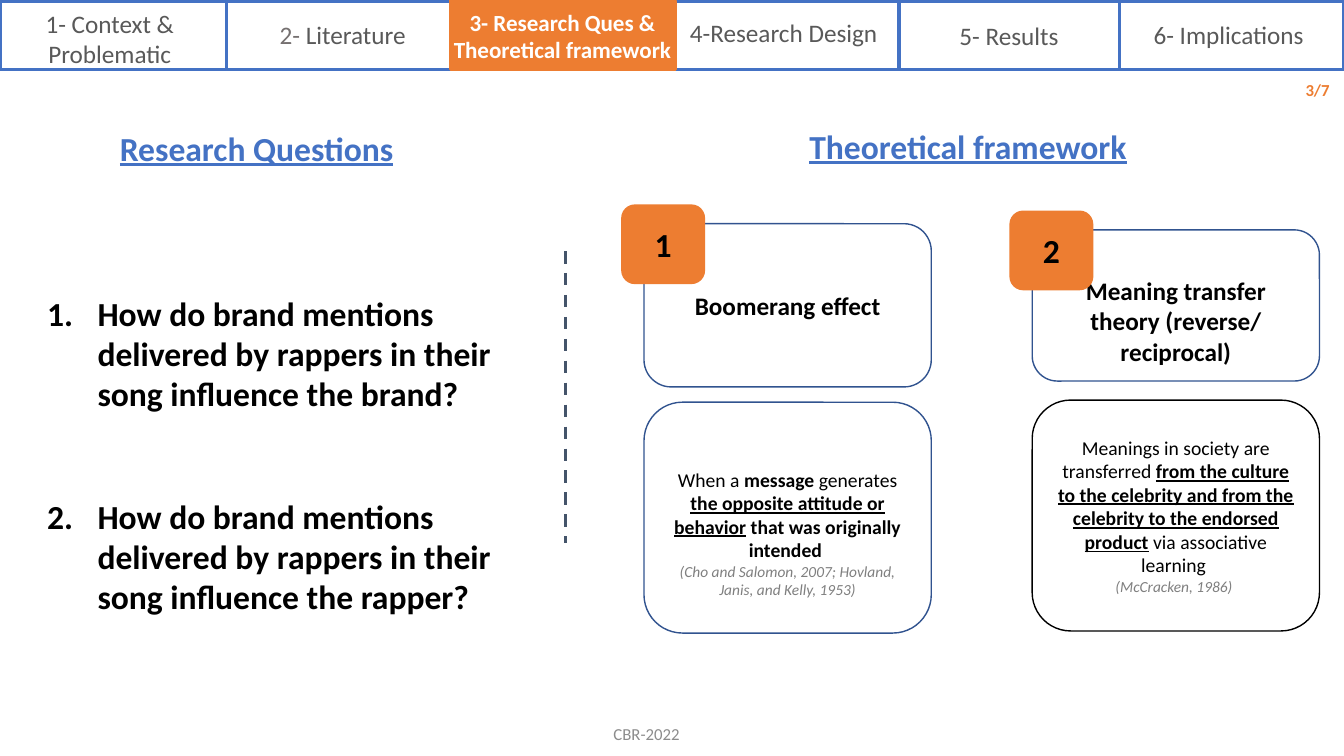
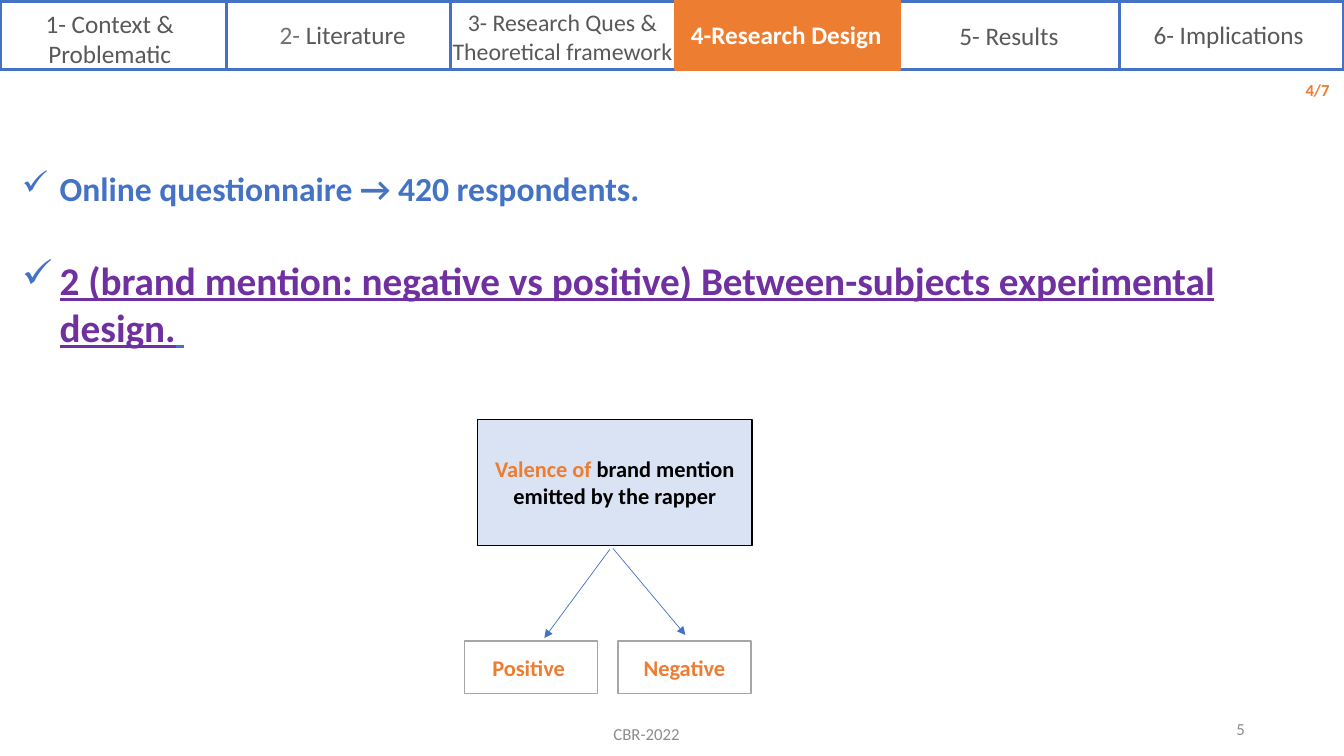
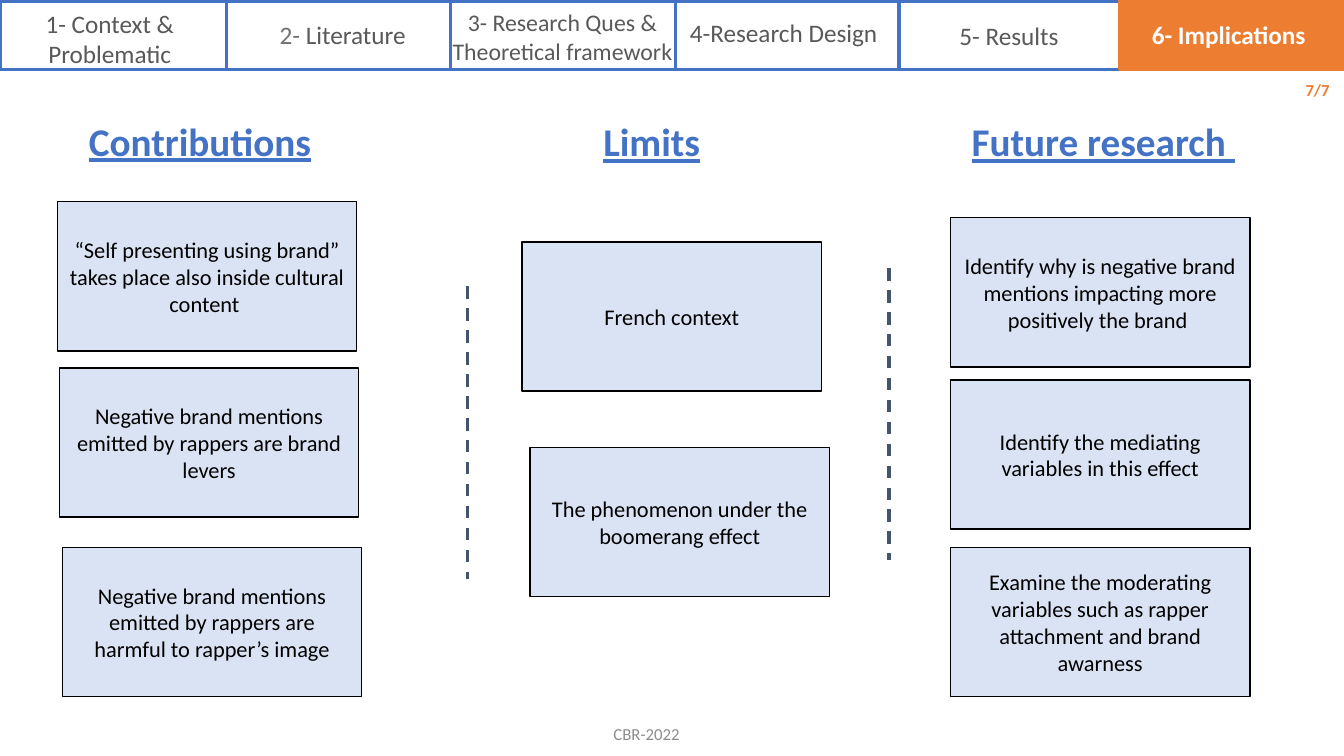
import dataclasses

import pptx
import pptx.dml.color
import pptx.enum.dml
import pptx.enum.shapes
import pptx.enum.text
import pptx.oxml.ns
import pptx.util
from lxml import etree

Pt = pptx.util.Pt
SHAPES = pptx.enum.shapes.MSO_SHAPE
ALIGN = pptx.enum.text.PP_ALIGN
ANCHOR = pptx.enum.text.MSO_ANCHOR


@dataclasses.dataclass(frozen=True)
class Style:
    size: float
    color: str
    bold: bool = False
    underline: bool = False
    italic: bool = False


@dataclasses.dataclass(frozen=True)
class Theme:
    font = "Calibri"
    blue = "4472C4"
    outline = "31538F"
    slate = "44546A"
    orange = "ED7D31"
    pale = "DAE3F3"
    black = "000000"
    gray = "A6A6A6"
    tab = Style(18, "595959")
    active_tab = Style(18, "FFFFFF", bold=True)
    footer = Style(12, "8C8C8C")
    page = Style(12, orange, bold=True)
    heading = Style(24, blue, bold=True, underline=True)
    column_heading = Style(28, blue, bold=True, underline=True)
    question = Style(24, black, bold=True)
    card_title = Style(18, black, bold=True)
    card_text = Style(14, black)
    citation = Style(11, "7F7F7F", italic=True)
    point = Style(24, blue, bold=True)
    design = Style(28, "7030A0", bold=True, underline=True)
    factor = Style(16, black, bold=True)
    level = Style(16, orange, bold=True)
    box = Style(16, black)


THEME = Theme()
STRONG = dataclasses.replace(THEME.card_text, bold=True)
KEY = dataclasses.replace(STRONG, underline=True)
INSETS = (7.2, 3.6, 7.2, 3.6)

# Navigation band: label, text area, text size; then the area and size when active
TAB_EDGES = (0, 161.5, 321.8, 482.4, 642.2, 799.9, 960)
TAB_TOP, TAB_HEIGHT = 0.7, 49
TABS = [
    ("1- Context & Problematic", (8.6, 2.2, 139.7, 51), 18),
    ([("2- ", Style(18, "757070")), ("Literature", THEME.tab)], (177.8, 10, 133.9, 28.8), 18),
    ("3- Research Ques & Theoretical framework", (316, 2.2, 171.4, 48), 17),
    ("4-Research Design", (485.3, 8.6, 149, 28.8), 18),
    ("5- Results", (653.8, 10.8, 133.9, 28.8), 18),
    ("6- Implications", (810.7, 10, 133.9, 28.8), 18),
]
ACTIVE_TABS = {
    3: ((316, 2.2, 171.4, 47.5), 16.5),
    4: ((484.6, 10, 154, 28.8), 18),
    6: ((810.7, 10, 133.9, 28.8), 18),
}
FOOTER = "CBR-2022"

FRAMEWORK_HEADINGS = [
    ("Research Questions", (78.5, 87.8, 212.4, 36)),
    ("Theoretical framework", (571, 86.4, 244, 36)),
]
QUESTIONS = [
    "How do brand mentions delivered by rappers in their song influence the brand?",
    "How do brand mentions delivered by rappers in their song influence the rapper?",
]
CARD_WIDTH, DESCRIPTION_HEIGHT = 205.2, 164.9
THEORIES = [
    dict(
        title="Boomerang effect", left=460, top=159.8, height=116.6, title_insets=INSETS,
        description=[
            [("When a ", THEME.card_text), ("message ", STRONG), ("generates ", THEME.card_text),
             ("the opposite attitude or behavior", KEY),
             (" that was originally intended ", STRONG)],
            [("(Cho and Salomon, 2007; Hovland, Janis, and Kelly, 1953)", THEME.citation)],
        ],
        description_top=287.3, description_insets=(7.2, 25.6, 7.2, 3.6), edge=THEME.outline,
    ),
    dict(
        title="Meaning transfer theory (reverse/ reciprocal)", left=737.3, top=164.2, height=108,
        title_insets=(15, 25.6, 15, 3.6),
        description=[
            [("Meanings in society are transferred ", THEME.card_text),
             ("from the culture to the celebrity and from the celebrity to the endorsed product",
              KEY),
             (" via associative learning ", THEME.card_text)],
            [("(McCracken, 1986) ", THEME.citation)],
        ],
        description_top=285.8, description_insets=INSETS, edge=THEME.black,
    ),
]

DESIGN_POINTS = [
    [("Online questionnaire → 420 respondents.", THEME.point)],
    [("2 (brand mention: negative vs positive) Between-subjects experimental design.",
      THEME.design),
     (" ", dataclasses.replace(THEME.design, color=THEME.blue))],
]
FACTOR = [("Valence of ", THEME.level), ("brand mention emitted by the rapper", THEME.factor)]
LEVELS = [
    ("Positive ", 331.9, ((435.6, 392.4), (388.8, 455.8))),
    ("Negative", 441.4, ((437.8, 391.7), (489.6, 453.6))),
]

BOX_WIDTH, BOX_HEIGHT = 213.8, 106.6
COLUMNS = [
    ("Contributions", (36, 79.9), [
        ("“Self presenting using brand” takes place also inside cultural content ", 41, 144),
        ("Negative brand mentions emitted by rappers are brand levers", 42.5, 262.8),
        ("Negative brand mentions emitted by rappers are harmful to rapper’s image", 44.6, 391),
    ]),
    ("Limits", (358.6, 80.6), [
        ("French context", 373, 172.8),
        ("The phenomenon under the boomerang effect", 378.7, 319.7),
    ]),
    ("Future research ", (681.1, 80.6), [
        ("Identify why is negative brand mentions impacting more positively the brand ",
         679, 155.5),
        ("Identify the mediating variables in this effect", 679, 271.4),
        ("Examine the moderating variables such as rapper attachment and brand awarness",
         679, 391),
    ]),
]
DIVIDER_LENGTH = 208.8


def rgb(color):
    return pptx.dml.color.RGBColor.from_string(color)


def write(shape, paragraphs, style, align=ALIGN.CENTER, anchor=ANCHOR.MIDDLE, insets=INSETS):
    """Fill a shape with paragraphs, each a string or a list of (text, style) runs."""
    frame = shape.text_frame
    frame.word_wrap = True
    frame.vertical_anchor = anchor
    frame.margin_left, frame.margin_top, frame.margin_right, frame.margin_bottom = map(Pt, insets)
    for index, content in enumerate(paragraphs):
        paragraph = frame.add_paragraph() if index else frame.paragraphs[0]
        paragraph.alignment = align
        for text, look in [(content, style)] if isinstance(content, str) else content:
            run = paragraph.add_run()
            run.text = text
            font = run.font
            font.name, font.size = THEME.font, Pt(look.size)
            font.bold, font.italic, font.underline = look.bold, look.italic, look.underline
            font.color.rgb = rgb(look.color)
    return frame


def add_text(slide, area, paragraphs, style, **layout):
    return write(slide.shapes.add_textbox(*map(Pt, area)), paragraphs, style, **layout)


def add_box(slide, area, fill=None, line=THEME.black, width=1, kind=SHAPES.RECTANGLE):
    shape = slide.shapes.add_shape(kind, *map(Pt, area))
    shape.shadow.inherit = False
    if fill:
        shape.fill.solid()
        shape.fill.fore_color.rgb = rgb(fill)
    else:
        shape.fill.background()
    shape.line.color.rgb = rgb(line)
    shape.line.width = Pt(width)
    return shape


def add_line(slide, start, end, color, width):
    line = slide.shapes.add_connector(
        pptx.enum.shapes.MSO_CONNECTOR.STRAIGHT, *map(Pt, (*start, *end)))
    line.line.color.rgb = rgb(color)
    line.line.width = Pt(width)
    etree.SubElement(line._element.spPr, pptx.oxml.ns.qn("a:effectLst"))
    return line


def add_divider(slide, left, top):
    line = add_line(slide, (left, top), (left, top + DIVIDER_LENGTH), THEME.slate, 2.25)
    line.line.dash_style = pptx.enum.dml.MSO_LINE.DASH


def add_arrow(slide, start, end):
    line = add_line(slide, start, end, THEME.blue, 0.5)
    outline = line._element.spPr.find(pptx.oxml.ns.qn("a:ln"))
    etree.SubElement(outline, pptx.oxml.ns.qn("a:tailEnd"), type="triangle")


def set_bullets(frame, indent, gap, bullet, color=None, **attributes):
    """Give each paragraph a hanging bullet, with a gap between paragraphs."""
    for index, paragraph in enumerate(frame.paragraphs):
        if index:
            paragraph.space_before = Pt(gap)
        properties = paragraph._p.get_or_add_pPr()
        properties.set("marL", str(Pt(indent)))
        properties.set("indent", str(-Pt(indent)))
        if color:
            holder = etree.SubElement(properties, pptx.oxml.ns.qn("a:buClr"))
            etree.SubElement(holder, pptx.oxml.ns.qn("a:srgbClr"), val=color)
        etree.SubElement(properties, pptx.oxml.ns.qn(bullet), **attributes)


def add_tab_frame(slide, number, active):
    left, right = TAB_EDGES[number - 1:number + 1]
    add_box(slide, (left, TAB_TOP, right - left, TAB_HEIGHT),
            fill=THEME.orange if active else None,
            line=THEME.orange if active else THEME.blue,
            width=2.25, kind=SHAPES.FLOWCHART_PROCESS)


def start_slide(presentation, active, page):
    """Add a slide with the navigation band, page mark and footer."""
    slide = presentation.slides.add_slide(presentation.slide_layouts[6])
    numbers = range(1, len(TABS) + 1)
    for number in sorted(numbers, key=lambda number: number == active):
        add_tab_frame(slide, number, number == active)
    for number, (label, area, size) in zip(numbers, TABS):
        style = THEME.tab
        if number == active:
            area, size = ACTIVE_TABS[number]
            style = THEME.active_tab
        add_text(slide, area, [label], dataclasses.replace(style, size=size),
                 anchor=ANCHOR.TOP, insets=(5, 3.6, 5, 3.6))
    add_text(slide, (914.4, 49.7, 42.5, 28.8), [page], THEME.page, align=ALIGN.RIGHT)
    add_text(slide, (430.6, 513.4, 62.6, 21.6), [FOOTER], THEME.footer, insets=(0, 3.6, 0, 3.6))
    return slide


def build_framework(presentation):
    slide = start_slide(presentation, 3, "3/7")
    for text, area in FRAMEWORK_HEADINGS:
        add_text(slide, area, [text], THEME.heading, align=ALIGN.LEFT, anchor=ANCHOR.TOP)
    frame = add_text(slide, (26.6, 146.9, 336.2, 298.1), QUESTIONS, THEME.question,
                     align=ALIGN.LEFT, anchor=ANCHOR.TOP, insets=(7.2, 62.2, 7.2, 3.6))
    set_bullets(frame, 36, 58.6, "a:buAutoNum", type="arabicPeriod")
    add_divider(slide, 403.9, 179.3)
    rounded = SHAPES.ROUNDED_RECTANGLE
    for number, theory in enumerate(THEORIES, 1):
        left, top = theory["left"], theory["top"]
        title = add_box(slide, (left, top, CARD_WIDTH, theory["height"]),
                        line=THEME.outline, kind=rounded)
        write(title, [theory["title"]], THEME.card_title, insets=theory["title_insets"])
        badge = add_box(slide, (left - 15.8, top - 13.3, 59, 56), fill=THEME.orange,
                        line=THEME.orange, kind=rounded)
        write(badge, [str(number)], THEME.question)
        description = add_box(
            slide, (left, theory["description_top"], CARD_WIDTH, DESCRIPTION_HEIGHT),
            line=theory["edge"], kind=rounded)
        write(description, theory["description"], THEME.card_text,
              insets=theory["description_insets"])


def build_design(presentation):
    slide = start_slide(presentation, 4, "4/7")
    frame = add_text(slide, (8.6, 116.6, 909.4, 167), DESIGN_POINTS, THEME.point,
                     align=ALIGN.LEFT, anchor=ANCHOR.TOP)
    set_bullets(frame, 27, 34.2, "a:buChar", color=THEME.blue, char="✓")
    write(add_box(slide, (341.3, 299.5, 195.8, 90), fill=THEME.pale), [FACTOR], THEME.factor)
    for text, left, (start, end) in LEVELS:
        write(add_box(slide, (left, 457.9, 95, 37.4), line=THEME.gray), [text], THEME.level)
        add_arrow(slide, start, end)
    add_text(slide, (680.4, 506.2, 216, 28.8), ["5"], THEME.footer, align=ALIGN.RIGHT)


def build_implications(presentation):
    slide = start_slide(presentation, 6, "7/7")
    for heading, position, boxes in COLUMNS:
        add_text(slide, (*position, BOX_WIDTH, 41), [heading], THEME.column_heading,
                 anchor=ANCHOR.TOP)
        for text, left, top in boxes:
            box = add_box(slide, (left, top, BOX_WIDTH, BOX_HEIGHT), fill=THEME.pale)
            write(box, [text], THEME.box)
    for left, top in ((334.1, 204.5), (635, 191.5)):
        add_divider(slide, left, top)


def main():
    presentation = pptx.Presentation()
    presentation.slide_width, presentation.slide_height = Pt(960), Pt(540)
    build_framework(presentation)
    build_design(presentation)
    build_implications(presentation)
    presentation.save("out.pptx")


if __name__ == "__main__":
    main()
